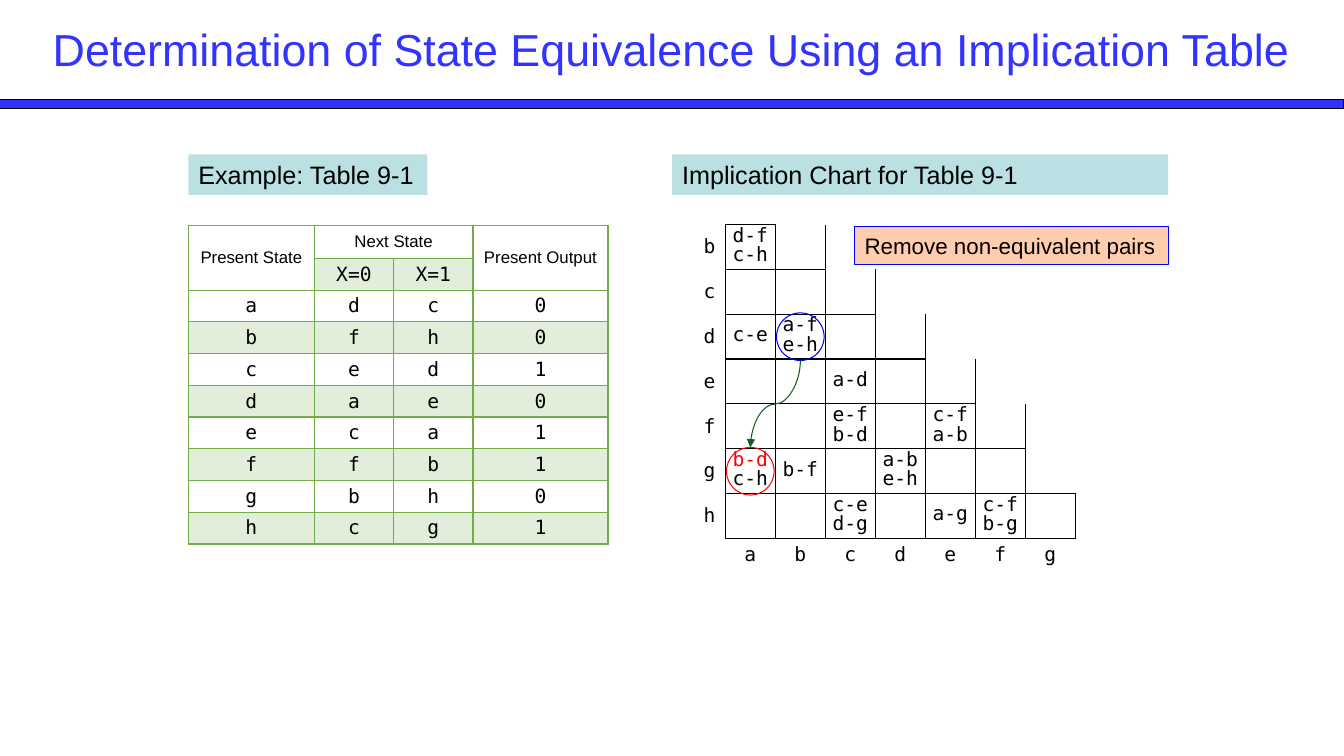
from dataclasses import dataclass

from pptx import Presentation
from pptx.dml.color import RGBColor
from pptx.enum.shapes import MSO_CONNECTOR, MSO_SHAPE
from pptx.enum.text import MSO_ANCHOR, MSO_AUTO_SIZE, PP_ALIGN
from pptx.oxml.ns import qn
from pptx.util import Cm, Pt
from lxml.etree import SubElement

TITLE = "Determination of State Equivalence Using an Implication Table"
# text, left, width
HEADINGS = [
    ("Example: Table 9-1", 4.75, 6.02),
    ("Implication Chart for Table 9-1", 16.94, 12.5),
]
REMARK = "Remove non-equivalent pairs"

STATE_HEADER = [
    ["Present State", "Next State", "", "Present Output"],
    ["", "X=0", "X=1", ""],
]
STATE_ROWS = ["adc0", "bfh0", "ced1", "dae0", "eca1", "ffb1", "gbh0", "hcg1"]
STATE_COLS = [3.17, 2, 2, 3.4]
MERGES = [((0, 0), (1, 0)), ((0, 1), (0, 2)), ((0, 3), (1, 3))]

STATES = "abcdefgh"
# (row state, column state): implied pairs
IMPLIED = {
    "ba": ["d-f", "c-h"],
    "da": ["c-e"], "db": ["a-f", "e-h"],
    "ec": ["a-d"],
    "fc": ["e-f", "b-d"], "fe": ["c-f", "a-b"],
    "ga": ["b-d", "c-h"], "gb": ["b-f"], "gd": ["a-b", "e-h"],
    "hc": ["c-e", "d-g"], "he": ["a-g"], "hf": ["c-f", "b-g"],
}
REMOVED = ("ga", "b-d")
CHART_LEFT, CHART_TOP, CHART_W, CHART_H = 17.02, 5.66, 1.26, 1.13
CIRCLE = 1.2


@dataclass(frozen=True)
class Theme:
    sans: str = "Arial"
    mono: str = "DejaVu Sans Mono"
    title_size: int = 32
    heading_size: int = 18
    remark_size: int = 16
    cell_size: int = 14
    header_size: int = 12
    black: str = "000000"
    title: str = "3333FF"
    heading: str = "BBE0E3"
    green: str = "70AD47"
    orange: str = "FF6600"
    blue: str = "0000FF"
    red: str = "FF0000"
    arrow: str = "0D5F22"


T = Theme()


def rgb(color):
    return RGBColor.from_string(color)


def add_run(p, text, size, color=T.black, font=T.sans):
    r = p.add_run()
    r.text = text
    r.font.size, r.font.name = Pt(size), font
    r.font.color.rgb = rgb(color)


def set_fill(fill, color, opacity=100):
    fill.solid()
    fill.fore_color.rgb = rgb(color)
    if opacity < 100:
        clr = fill._xPr.find(qn("a:solidFill"))[0]
        SubElement(clr, qn("a:alpha"), val=str(opacity * 1000))


def add_box(slide, kind, left, top, width, height, fill=None, line=None, opacity=100):
    sp = slide.shapes.add_shape(kind, Cm(left), Cm(top), Cm(width), Cm(height))
    sp.shadow.inherit = False
    if fill:
        set_fill(sp.fill, fill, opacity)
    else:
        sp.fill.background()
    if line:
        sp.line.color.rgb, sp.line.width = rgb(line), Pt(0.75)
    else:
        sp.line.fill.background()
    return sp


def add_label(sp, text, size, wrap):
    tf = sp.text_frame
    tf.word_wrap, tf.auto_size = wrap, MSO_AUTO_SIZE.SHAPE_TO_FIT_TEXT
    p = tf.paragraphs[0]
    p.alignment = PP_ALIGN.LEFT
    add_run(p, text, size)


def set_borders(cell, sides, color):
    """Draw 1 pt lines on the given sides, a subset of "LRTB" in that order."""
    tc_pr = cell._tc.get_or_add_tcPr()
    for side in sides:
        ln = SubElement(tc_pr, qn("a:ln" + side), w=str(Pt(1)))
        SubElement(SubElement(ln, qn("a:solidFill")), qn("a:srgbClr"), val=color)


def add_plain_table(slide, left, top, widths, heights):
    """Add a table with the style that has neither fill nor grid."""
    frame = slide.shapes.add_table(len(heights), len(widths), Cm(left), Cm(top),
                                   Cm(sum(widths)), Cm(sum(heights)))
    table = frame.table
    table.first_row = table.horz_banding = False
    style = table._tbl.tblPr.find(qn("a:tableStyleId"))
    style.text = "{2D5ABB26-0587-4C30-8999-92F81FD0307C}"
    for col, width in zip(table.columns, widths):
        col.width = Cm(width)
    for row, height in zip(table.rows, heights):
        row.height = Cm(height)
    return table


def add_state_table(slide):
    rows = STATE_HEADER + [list(row) for row in STATE_ROWS]
    table = add_plain_table(slide, 4.75, 5.68, STATE_COLS, [0.83] + [0.8] * 9)
    for i, row in enumerate(rows):
        for j, text in enumerate(row):
            cell = table.cell(i, j)
            set_borders(cell, "LRTB", T.green)
            cell.margin_top = cell.margin_bottom = 0
            cell.vertical_anchor = MSO_ANCHOR.MIDDLE
            if i % 2 and text:
                set_fill(cell.fill, T.green, 20)
            else:
                cell.fill.background()
            p = cell.text_frame.paragraphs[0]
            p.alignment = PP_ALIGN.CENTER
            if text and i == 0:
                add_run(p, text, T.header_size)
            elif text:
                add_run(p, text, T.cell_size, font=T.mono)
    for first, last in MERGES:
        table.cell(*first).merge(table.cell(*last))


def in_triangle(i, j):
    return 0 <= i < 7 and 1 <= j <= i + 1


def add_implication_chart(slide):
    n = len(STATES)
    table = add_plain_table(slide, CHART_LEFT, CHART_TOP, [CHART_W] * n, [CHART_H] * n)
    neighbours = {"L": (0, -1), "R": (0, 1), "T": (-1, 0), "B": (1, 0)}
    for i in range(n):
        for j in range(n):
            cell = table.cell(i, j)
            inside = in_triangle(i, j)
            set_borders(cell, [side for side, (di, dj) in neighbours.items()
                               if inside or in_triangle(i + di, j + dj)], T.black)
            cell.fill.background()
            if i < n - 1:
                cell.vertical_anchor = MSO_ANCHOR.MIDDLE
            pair, lines = "", []
            if inside:
                pair = STATES[i + 1] + STATES[j - 1]
                lines = IMPLIED.get(pair, [])
                cell.margin_left = cell.margin_right = 0
                cell.margin_top = cell.margin_bottom = 0
            elif j == 0 and i < n - 1:
                lines = [STATES[i + 1]]
            elif i == n - 1 and j:
                lines = [STATES[j - 1]]
            tf = cell.text_frame
            for k, text in enumerate(lines):
                p = tf.add_paragraph() if k else tf.paragraphs[0]
                p.alignment = PP_ALIGN.CENTER if j else PP_ALIGN.RIGHT
                if inside:
                    p.line_spacing = Pt(14)
                color = T.red if (pair, text) == REMOVED else T.black
                add_run(p, text, T.cell_size, color, T.mono)


def cell_center(pair):
    row, col = (STATES.index(state) for state in pair)
    return CHART_LEFT + (col + 1.5) * CHART_W, CHART_TOP + (row - 0.5) * CHART_H


def add_circle(slide, pair, color):
    x, y = cell_center(pair)
    add_box(slide, MSO_SHAPE.OVAL, x - CIRCLE / 2, y - CIRCLE / 2, CIRCLE, CIRCLE, line=color)


def add_curved_arrow(slide, start, end):
    """Curve down and left; the box is laid flat and turned by 90 degrees."""
    (x1, y1), (x2, y2) = cell_center(start), cell_center(end)
    length, width = y2 - y1 - CIRCLE, x1 - x2
    left, top = (x1 + x2 - length) / 2, (y1 + y2 - width) / 2
    cxn = slide.shapes.add_connector(MSO_CONNECTOR.CURVE, Cm(left), Cm(top),
                                     Cm(left + length), Cm(top + width))
    cxn.line.color.rgb, cxn.line.width = rgb(T.arrow), Pt(0.75)
    sp_pr = cxn._element.spPr
    sp_pr.find(qn("a:xfrm")).set("rot", "5400000")
    SubElement(sp_pr.find(qn("a:ln")), qn("a:tailEnd"), type="triangle")
    SubElement(sp_pr, qn("a:effectLst"))


def main():
    prs = Presentation()
    prs.slide_width, prs.slide_height = Cm(33.87), Cm(19.05)
    slide = prs.slides.add_slide(prs.slide_layouts[5])
    add_box(slide, MSO_SHAPE.RECTANGLE, 0, 2.51, 33.87, 0.22, T.title, T.black)

    title = slide.shapes.title
    title.left, title.top, title.width, title.height = Cm(0.53), Cm(0.33), Cm(32.8), Cm(1.8)
    tf = title.text_frame
    tf.word_wrap, tf.auto_size = True, MSO_AUTO_SIZE.NONE
    tf.vertical_anchor = MSO_ANCHOR.MIDDLE
    p = tf.paragraphs[0]
    p.alignment = PP_ALIGN.CENTER
    add_run(p, TITLE, T.title_size, T.title)

    add_state_table(slide)
    add_implication_chart(slide)
    add_circle(slide, "ga", T.red)
    sp = add_box(slide, MSO_SHAPE.RECTANGLE, 21.54, 5.72, 7.92, 0.94, T.orange, T.blue, 32)
    add_label(sp, REMARK, T.remark_size, False)
    add_circle(slide, "db", T.blue)
    add_curved_arrow(slide, "db", "ga")
    for text, left, width in HEADINGS:
        sp = add_box(slide, MSO_SHAPE.RECTANGLE, left, 3.89, width, 1.02, T.heading)
        add_label(sp, text, T.heading_size, True)
    prs.save("out.pptx")


if __name__ == "__main__":
    main()
